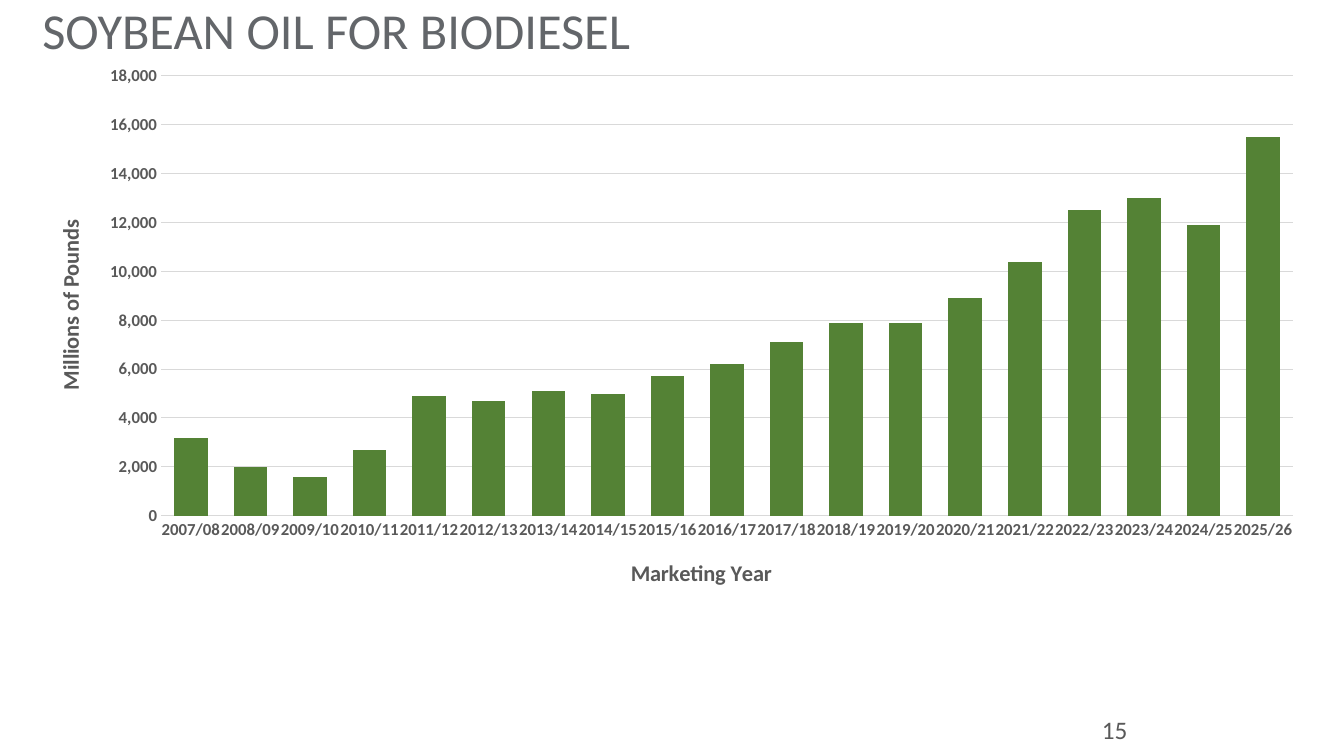
import pptx
import pptx.util
import pptx.chart.data
import pptx.dml.color
import pptx.enum.chart
import pptx.enum.text
import pptx.oxml
import pptx.oxml.ns

Inches = pptx.util.Inches
Pt = pptx.util.Pt
RGBColor = pptx.dml.color.RGBColor
qn = pptx.oxml.ns.qn

SLATE = RGBColor(0x63, 0x66, 0x6A)
GRAY = RGBColor(0x59, 0x59, 0x59)
RULE = RGBColor(0xD9, 0xD9, 0xD9)
GREEN = RGBColor(0x54, 0x82, 0x35)
FACE = "Calibri"
POUNDS = [3200, 2000, 1600, 2700, 4900, 4700, 5100, 5000, 5700, 6200,
          7100, 7900, 7900, 8900, 10400, 12500, 13000, 11900, 15500]


def set_font(font, size, color, bold=False):
    font.name = FACE
    font.size = Pt(size)
    font.bold = bold
    font.color.rgb = color


def set_line(line, color):
    line.color.rgb = color
    line.width = Pt(0.75)


def set_box(shape, box):
    shape.left, shape.top, shape.width, shape.height = map(Inches, box)


def set_text(shape, text, size, color, anchor):
    frame = shape.text_frame
    frame.word_wrap = True
    frame.auto_size = pptx.enum.text.MSO_AUTO_SIZE.NONE
    frame.vertical_anchor = anchor
    para = frame.paragraphs[0]
    para.text = text
    para.line_spacing = 0.9
    para.space_before = Pt(0)
    para.alignment = pptx.enum.text.PP_ALIGN.LEFT
    set_font(para.font, size, color)


def add_layout(parent, index, inner=False, **place):
    for old in parent.findall(qn("c:layout")):
        parent.remove(old)
    target = '<c:layoutTarget val="inner"/>' if inner else ""
    modes = "".join(f'<c:{key}Mode val="edge"/>' for key in "xy")
    sizes = "".join(f'<c:{key} val="{val}"/>' for key, val in place.items())
    layout = pptx.oxml.parse_xml(
        f'<c:layout {pptx.oxml.ns.nsdecls("c")}><c:manualLayout>'
        f'{target}{modes}{sizes}</c:manualLayout></c:layout>')
    parent.insert(index, layout)


def format_axis(axis, text, x, y):
    axis.major_tick_mark = pptx.enum.chart.XL_TICK_MARK.NONE
    axis.minor_tick_mark = pptx.enum.chart.XL_TICK_MARK.NONE
    set_font(axis.tick_labels.font, 12, GRAY, True)
    para = axis.axis_title.text_frame.paragraphs[0]
    para.text = text
    set_font(para.font, 16, GRAY, True)
    add_layout(axis.axis_title._element, 1, x=x, y=y)


def add_title(slide, box):
    title = slide.shapes.title
    set_box(title, box)
    set_text(title, "SOYBEAN OIL FOR BIODIESEL", 36, SLATE,
             pptx.enum.text.MSO_ANCHOR.BOTTOM)


def add_columns(slide, box):
    data = pptx.chart.data.CategoryChartData(number_format="#,##0")
    data.categories = [f"{year}/{(year + 1) % 100:02}"
                       for year in range(2007, 2007 + len(POUNDS))]
    data.add_series("Series 1", POUNDS)
    chart = slide.shapes.add_chart(
        pptx.enum.chart.XL_CHART_TYPE.COLUMN_CLUSTERED,
        *map(Inches, box), data).chart
    chart.has_legend = False
    chart.has_title = False
    set_font(chart.font, 10, GRAY)
    plot = chart.plots[0]
    plot.gap_width = 78
    plot.overlap = -27
    plot.vary_by_categories = False
    fill = plot.series[0].format.fill
    fill.solid()
    fill.fore_color.rgb = GREEN

    years = chart.category_axis
    format_axis(years, "Marketing Year", 0.465, 0.9)
    set_line(years.format.line, RULE)

    scale = chart.value_axis
    format_axis(scale, "Millions of Pounds", 0.02, 0.29)
    scale.minimum_scale = 0
    scale.maximum_scale = 18000
    scale.major_unit = 2000
    scale.tick_labels.number_format = "#,##0"
    scale.tick_labels.number_format_is_linked = False
    scale.format.line.fill.background()
    set_line(scale.major_gridlines.format.line, RULE)

    area = chart._chartSpace.find(".//" + qn("c:plotArea"))
    add_layout(area, 0, True, x=0.105, y=0.037, w=0.875, h=0.795)


def add_number(slide, box):
    number = slide.shapes.add_textbox(*map(Inches, box))
    set_text(number, "15", 18, GRAY, pptx.enum.text.MSO_ANCHOR.MIDDLE)


def main():
    deck = pptx.Presentation()
    deck.slide_width = Inches(13.33)
    deck.slide_height = Inches(7.5)
    slide = deck.slides.add_slide(deck.slide_layouts[5])
    add_title(slide, (0.32, 0.19, 6.19, 0.46))
    add_columns(slide, (0.25, 0.55, 12.83, 5.49))
    add_number(slide, (10.83, 7.06, 1.43, 0.4))
    deck.save("out.pptx")


if __name__ == "__main__":
    main()
